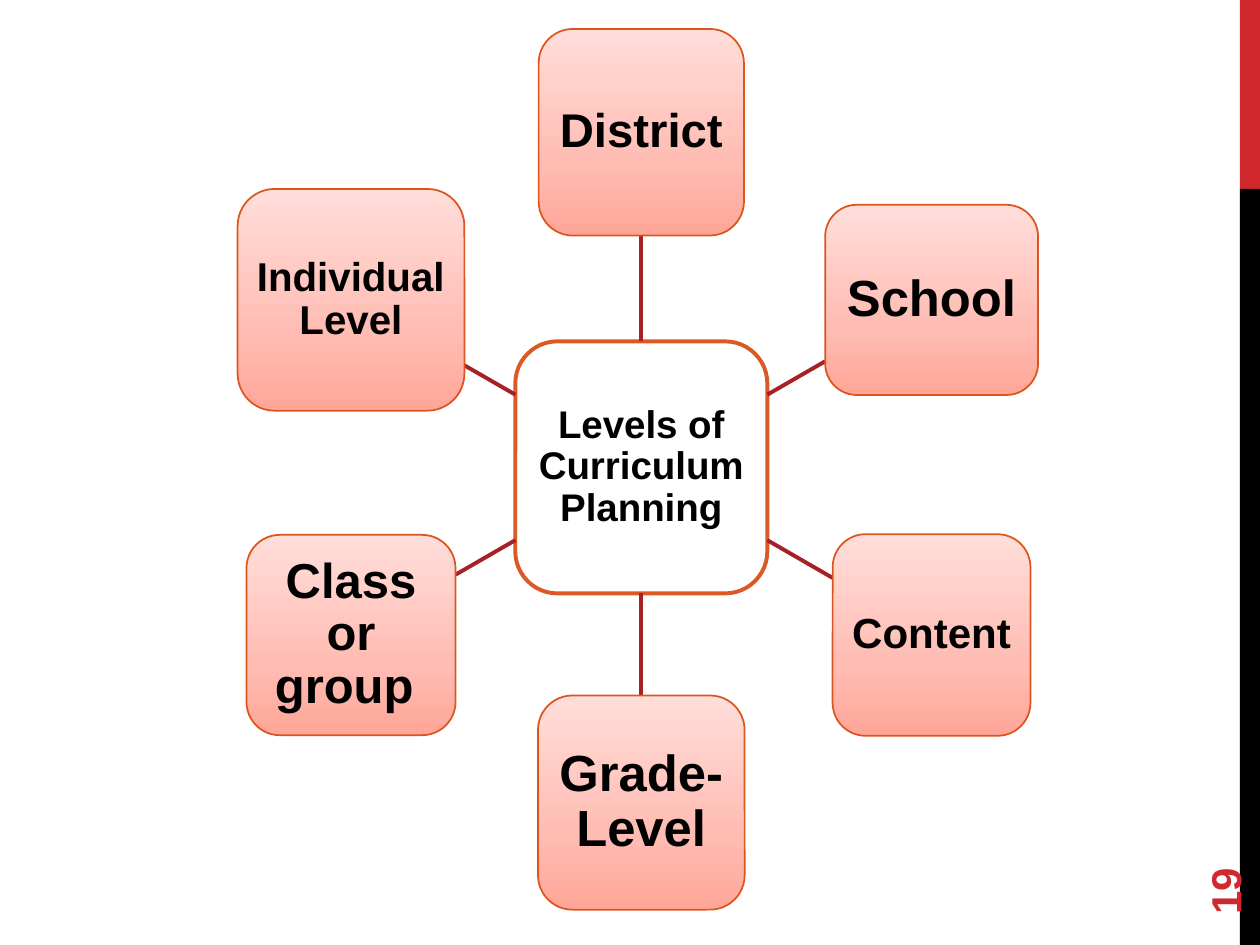
from copy import deepcopy
from math import cos, radians, sin

from lxml.etree import SubElement
from pptx import Presentation
from pptx.dml.color import RGBColor
from pptx.enum.shapes import MSO_CONNECTOR, MSO_SHAPE
from pptx.enum.text import MSO_ANCHOR, PP_ALIGN
from pptx.oxml.ns import qn
from pptx.util import Inches, Pt

HUB_X, HUB_Y, HUB_SIZE = 5.09, 3.71, 2
RADIUS = 2.66
# Stops run from the bottom of a box to its top
LEVEL_STOPS = [(0, "FFA698"), (0.35, "FFBCB3"), (1, "FFDED9")]
# Clockwise from the top: label, width, height, text size
LEVELS = [
    ("District", 1.63, 1.64, 27),
    ("School", 1.69, 1.51, 29),
    ("Content", 1.57, 1.6, 24),
    ("Grade-Level", 1.64, 1.7, 29),
    ("Class or group ", 1.66, 1.59, 28),
    ("Individual Level", 1.8, 1.76, 23),
]


def color(hex_value):
    return RGBColor.from_string(hex_value)


def write(paragraph, text, size, hex_value):
    run = paragraph.add_run()
    run.text = text
    run.font.name = "Arial"
    run.font.size = Pt(size)
    run.font.bold = True
    run.font.color.rgb = color(hex_value)


def fill_gradient(fill, stops):
    fill.gradient()
    fill.gradient_angle = 90
    first = fill.gradient_stops[0]
    # The default gradient has two stops; add a third between them
    stop_list = fill._xPr.find(qn("a:gradFill")).find(qn("a:gsLst"))
    stop_list.insert(1, deepcopy(stop_list[0]))
    for stop, (position, hex_value) in zip(fill.gradient_stops, stops):
        stop.position = position
        stop.color.rgb = color(hex_value)


def add_bar(slide, top, height, hex_value):
    bar = slide.shapes.add_shape(
        MSO_SHAPE.RECTANGLE, Inches(9.84), Inches(top), Inches(0.16), Inches(height))
    bar.shadow.inherit = False
    bar.fill.solid()
    bar.fill.fore_color.rgb = color(hex_value)
    bar.line.fill.background()


def add_page_number(slide, number):
    box = slide.shapes.add_textbox(Inches(9), Inches(6.44), Inches(1.44), Inches(0.4))
    box.rotation = 270
    box.text_frame.word_wrap = True
    box.text_frame.vertical_anchor = MSO_ANCHOR.MIDDLE
    write(box.text_frame.paragraphs[0], number, 24, "D1282E")


def add_box(slide, center, width, height, label, size, line_color, line_width):
    x, y = center
    box = slide.shapes.add_shape(
        MSO_SHAPE.ROUNDED_RECTANGLE, Inches(x - width / 2), Inches(y - height / 2),
        Inches(width), Inches(height))
    box.shadow.inherit = False
    box.line.color.rgb = color(line_color)
    box.line.width = Pt(line_width)
    frame = box.text_frame
    frame.word_wrap = True
    frame.vertical_anchor = MSO_ANCHOR.MIDDLE
    frame.margin_left = frame.margin_right = Inches(0.06)
    frame.margin_top = frame.margin_bottom = Inches(0.06)
    paragraph = frame.paragraphs[0]
    paragraph.alignment = PP_ALIGN.CENTER
    paragraph.line_spacing = 0.9
    write(paragraph, label, size, "000000")
    return box


def edge_distance(width, height, dx, dy):
    """Distance from a box's center to its edge along the unit vector (dx, dy)."""
    return 1 / max(abs(dx) / (width / 2), abs(dy) / (height / 2))


def add_spoke(slide, dx, dy, start, end):
    spoke = slide.shapes.add_connector(
        MSO_CONNECTOR.STRAIGHT,
        Inches(HUB_X + start * dx), Inches(HUB_Y + start * dy),
        Inches(HUB_X + end * dx), Inches(HUB_Y + end * dy))
    spoke.line.color.rgb = color("A72025")
    spoke.line.width = Pt(2.25)
    SubElement(spoke._element.spPr, qn("a:effectLst"))


def main():
    prs = Presentation()
    prs.slide_width, prs.slide_height = Inches(10), Inches(7.5)
    slide = prs.slides.add_slide(prs.slide_layouts[6])

    # Side band and page number
    add_bar(slide, 0, 1.5, "D1282E")
    add_bar(slide, 1.5, 6, "000000")
    add_page_number(slide, "19")

    # Hub
    hub = add_box(slide, (HUB_X, HUB_Y), HUB_SIZE, HUB_SIZE,
                  "Levels of Curriculum Planning", 22, "DC5924", 2.25)
    hub.fill.solid()
    hub.fill.fore_color.rgb = color("FFFFFF")

    # Levels around the hub, each joined to it by a spoke
    for index, (label, width, height, size) in enumerate(LEVELS):
        angle = radians(index * 360 / len(LEVELS) - 90)
        dx, dy = cos(angle), sin(angle)
        add_spoke(slide, dx, dy, edge_distance(HUB_SIZE, HUB_SIZE, dx, dy),
                  RADIUS - edge_distance(width, height, dx, dy))
        level = add_box(slide, (HUB_X + RADIUS * dx, HUB_Y + RADIUS * dy),
                        width, height, label, size, "DC551F", 1)
        fill_gradient(level.fill, LEVEL_STOPS)

    prs.save("out.pptx")


if __name__ == "__main__":
    main()
